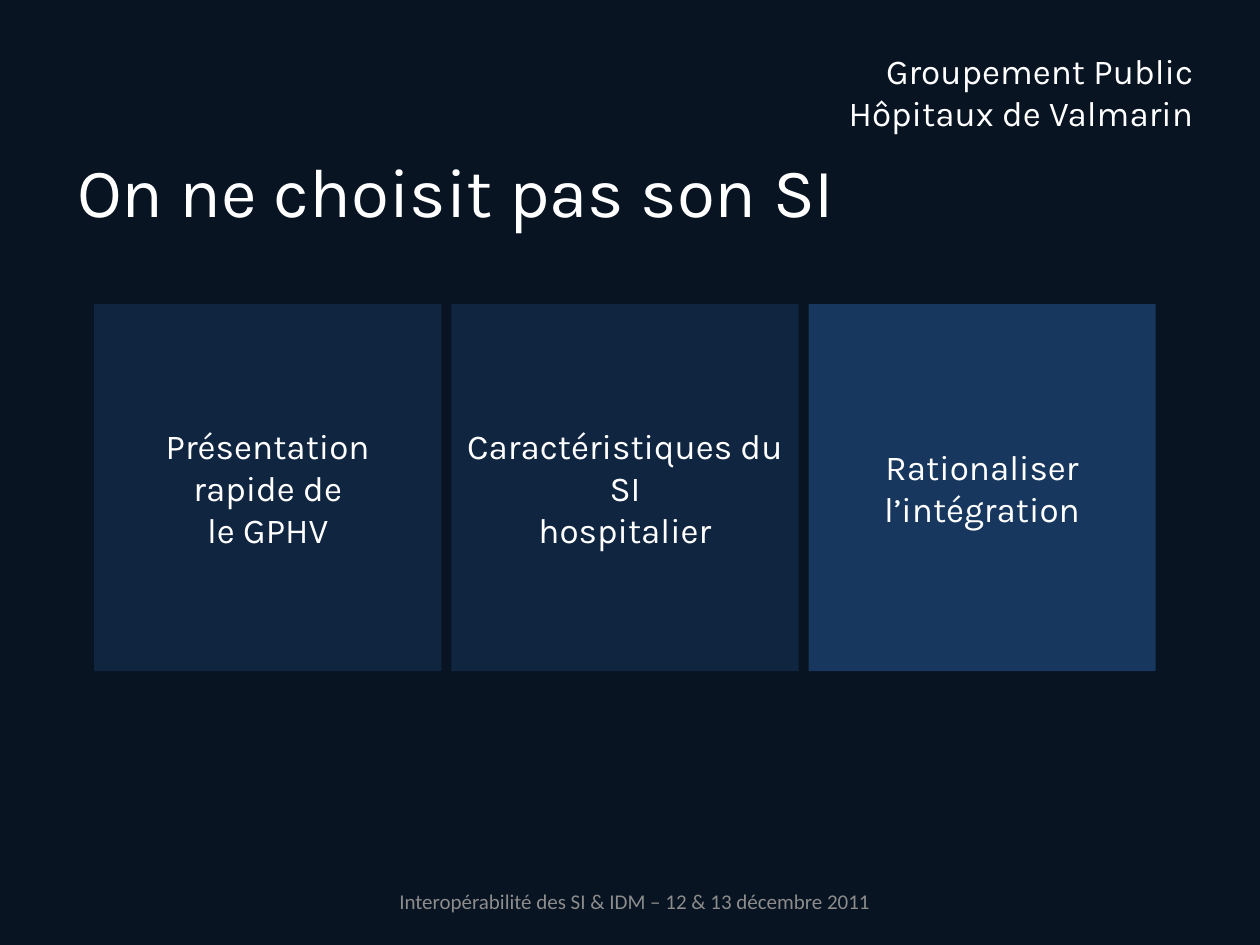
from typing import NamedTuple

from lxml.etree import SubElement
from pptx import Presentation
from pptx.dml.color import RGBColor
from pptx.enum.shapes import MSO_SHAPE as Preset
from pptx.enum.text import MSO_ANCHOR as Anchor, MSO_AUTO_SIZE as AutoSize, PP_ALIGN as Align
from pptx.oxml.ns import qn
from pptx.util import Cm, Pt

BACKGROUND = "081422"
BLUE = "17375E"
WHITE = "FFFFFF"
GREY = "8C8C8C"

PANEL_LEFT, PANEL_TOP = 1.9, 6.13
PANEL_WIDTH, PANEL_HEIGHT = 7.0, 7.4
PANEL_PITCH = 7.2


class Panel(NamedTuple):
    text: str
    opacity: int = 100


PANELS = [
    Panel("Présentation\nrapide de\nl’GPHV".replace("l’G", "le G"), 51),
    Panel("Caractéristiques du SI\nhospitalier", 51),
    Panel("Rationaliser\vl’intégration"),
]


def paint(fill, color: str, opacity: int = 100) -> None:
    fill.solid()
    fill.fore_color.rgb = RGBColor.from_string(color)
    if opacity < 100:
        color_node = fill._xPr.find(qn("a:solidFill"))[0]
        SubElement(color_node, qn("a:alpha"), val=str(opacity * 1000))


def write(box, text: str, *, size: float = 20, font: str = "Karla",
          color: str = WHITE, align: Align = Align.CENTER) -> None:
    """Fill the box with one paragraph per line; a vertical tab breaks a line."""
    frame = box.text_frame
    frame.text = text
    frame.word_wrap = True
    frame.auto_size = AutoSize.NONE
    frame.vertical_anchor = Anchor.MIDDLE
    for para in frame.paragraphs:
        para.alignment = align
        for span in para.runs:
            span.font.size = Pt(size)
            span.font.name = font
            span.font.color.rgb = RGBColor.from_string(color)


def add_text(page, left: float, top: float, width: float, height: float,
             text: str, **style) -> None:
    box = page.shapes.add_textbox(Cm(left), Cm(top), Cm(width), Cm(height))
    write(box, text, **style)


def set_title(page, text: str) -> None:
    title = page.shapes.title
    title.left, title.top = Cm(1.3), Cm(2.92)
    title.width, title.height = Cm(22.7), Cm(1.8)
    write(title, text, size=39.6, align=Align.LEFT)


def add_panel(page, column: int, panel: Panel) -> None:
    box = page.shapes.add_shape(
        Preset.RECTANGLE, Cm(PANEL_LEFT + column * PANEL_PITCH), Cm(PANEL_TOP),
        Cm(PANEL_WIDTH), Cm(PANEL_HEIGHT))
    box.shadow.inherit = False
    box.line.fill.background()
    paint(box.fill, BLUE, panel.opacity)
    write(box, panel.text)


def main() -> None:
    deck = Presentation()
    deck.slide_width, deck.slide_height = Cm(25.4), Cm(19.05)
    page = deck.slides.add_slide(deck.slide_layouts[5])
    paint(page.background.fill, BACKGROUND)

    add_text(page, 16.51, 0.74, 7.8, 2.2,
             "Groupement Public\nHôpitaux de Valmarin", align=Align.RIGHT)
    set_title(page, "On ne choisit pas son SI")
    for column, panel in enumerate(PANELS):
        add_panel(page, column, panel)
    add_text(page, 7.7, 17.65, 10.2, 1.02,
             "Interopérabilité des SI & IDM – 12 & 13 décembre 2011",
             size=12, font="Calibri", color=GREY)

    deck.save("out.pptx")


if __name__ == "__main__":
    main()
